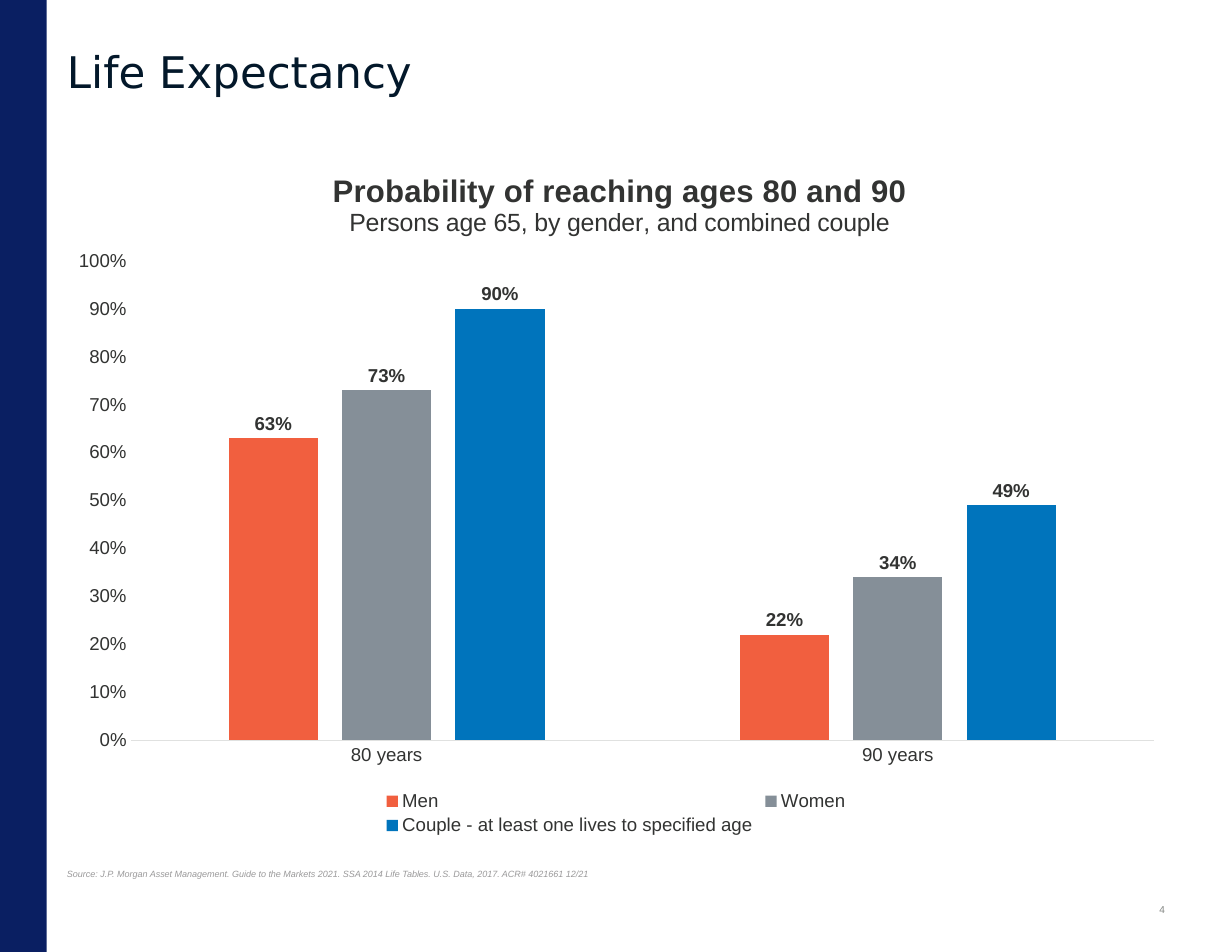
from lxml import etree
from pptx import Presentation
from pptx import util as u
from pptx.chart.data import CategoryChartData
from pptx.dml.color import RGBColor
from pptx.enum import chart as charts, shapes, text
from pptx.oxml.ns import qn

COLORS = {
    "navy": "0A1F62",
    "title": "03182A",
    "text": "323332",
    "source": "9A999A",
    "number": "838683",
    "axis": "E0E1E0",
    "Men": "F15F3F",
    "Women": "858F98",
    "Couple - at least one lives to specified age": "0074BC",
}

PROBABILITIES = {
    "Men": (0.63, 0.22),
    "Women": (0.73, 0.34),
    "Couple - at least one lives to specified age": (0.9, 0.49),
}


class SlideBuilder:
    body_font = "Arial"
    title_font = "DejaVu Sans"

    def __init__(self, slide):
        self.slide = slide

    def color(self, name):
        return RGBColor.from_string(COLORS[name])

    def style(self, font, size, color="text", bold=False, italic=False, name=None):
        font.name = name or self.body_font
        font.size = u.Pt(size)
        font.bold = bold
        font.italic = italic
        font.color.rgb = self.color(color)

    def box(self, *lengths):
        return [u.Pt(length) for length in lengths]

    def rectangle(self, place, color):
        shape = self.slide.shapes.add_shape(
            shapes.MSO_SHAPE.RECTANGLE, *self.box(*place))
        shape.shadow.inherit = False
        shape.fill.solid()
        shape.fill.fore_color.rgb = self.color(color)
        shape.line.fill.background()

    def label(self, place, words, anchor, align=text.PP_ALIGN.LEFT,
              spacing=1.0, **style):
        frame = self.slide.shapes.add_textbox(*self.box(*place)).text_frame
        frame.word_wrap = True
        frame.vertical_anchor = anchor
        frame.text = words
        paragraph = frame.paragraphs[0]
        paragraph.alignment = align
        paragraph.line_spacing = spacing
        self.style(paragraph.runs[0].font, **style)

    def layout(self, parent, index, target=None, **fractions):
        for old in parent.findall(qn("c:layout")):
            parent.remove(old)
        layout = etree.Element(qn("c:layout"))
        parent.insert(index, layout)
        manual = etree.SubElement(layout, qn("c:manualLayout"))
        settings = {"layoutTarget": target} if target else {}
        settings.update(xMode="edge", yMode="edge", **fractions)
        for name, value in settings.items():
            etree.SubElement(manual, qn(f"c:{name}")).set("val", str(value))

    def column_chart(self, place, categories, series, heading, subheading):
        data = CategoryChartData(number_format="0%")
        data.categories = categories
        for name, values in series.items():
            data.add_series(name, values)
        chart = self.slide.shapes.add_chart(
            charts.XL_CHART_TYPE.COLUMN_CLUSTERED, *self.box(*place), data).chart
        self.style(chart.font, 10)
        self.chart_title(chart, heading, subheading)
        self.axes(chart)
        self.columns(chart.plots[0])
        chart.has_legend = True
        chart.legend.position = charts.XL_LEGEND_POSITION.BOTTOM
        chart.legend.include_in_layout = False
        self.style(chart.legend.font, 12)
        self.layout(chart.plots[0]._element.getparent(), 0, "inner",
                    x=0.067, y=0.167, w=0.913, h=0.69)

    def chart_title(self, chart, heading, subheading):
        chart.has_title = True
        title = chart.chart_title
        title.include_in_layout = False
        title.text_frame.text = f"{heading}\n{subheading}"
        first, second = title.text_frame.paragraphs
        self.style(first.runs[0].font, 20, bold=True)
        self.style(second.runs[0].font, 16)
        self.layout(title._element, 1, x=0.244, y=0.035)

    def axes(self, chart):
        for axis in (chart.category_axis, chart.value_axis):
            axis.major_tick_mark = charts.XL_TICK_MARK.NONE
            axis.minor_tick_mark = charts.XL_TICK_MARK.NONE
            axis.has_major_gridlines = False
            self.style(axis.tick_labels.font, 12)
        line = chart.category_axis.format.line
        line.color.rgb = self.color("axis")
        line.width = u.Pt(0.75)
        values = chart.value_axis
        values.format.line.fill.background()
        values.minimum_scale, values.maximum_scale, values.major_unit = 0, 1, 0.1
        values.tick_labels.number_format = "0%"
        values.tick_labels.number_format_is_linked = False

    def columns(self, plot):
        plot.gap_width = 219
        plot.overlap = -27
        plot.vary_by_categories = False
        for series in plot.series:
            series.format.fill.solid()
            series.format.fill.fore_color.rgb = self.color(series.name)
            labels = series.data_labels
            labels.show_value = True
            labels.position = charts.XL_LABEL_POSITION.OUTSIDE_END
            labels.number_format = "0%"
            labels.number_format_is_linked = False
            self.style(labels.font, 12, bold=True)


def main():
    presentation = Presentation()
    presentation.slide_width = u.Pt(792)
    presentation.slide_height = u.Pt(612)
    builder = SlideBuilder(
        presentation.slides.add_slide(presentation.slide_layouts[6]))

    builder.rectangle((0, 0, 30, 612), "navy")
    builder.label((36, 33, 720, 30), "Life Expectancy", text.MSO_ANCHOR.MIDDLE,
                  spacing=0.9, size=28, color="title", name=builder.title_font)
    builder.label(
        (36, 545, 720, 24),
        "Source: J.P. Morgan Asset Management. Guide to the Markets 2021. "
        "SSA 2014 Life Tables. U.S. Data, 2017. ACR# 4021661 12/21",
        text.MSO_ANCHOR.BOTTOM, size=5.8, color="source", italic=True)
    builder.label((720, 571, 36, 27), "4", text.MSO_ANCHOR.MIDDLE,
                  text.PP_ALIGN.RIGHT, size=6.5, color="number")
    builder.column_chart(
        (36, 93, 720, 447), ("80 years", "90 years"), PROBABILITIES,
        "Probability of reaching ages 80 and 90",
        "Persons age 65, by gender, and combined couple")
    presentation.save("out.pptx")


if __name__ == "__main__":
    main()
